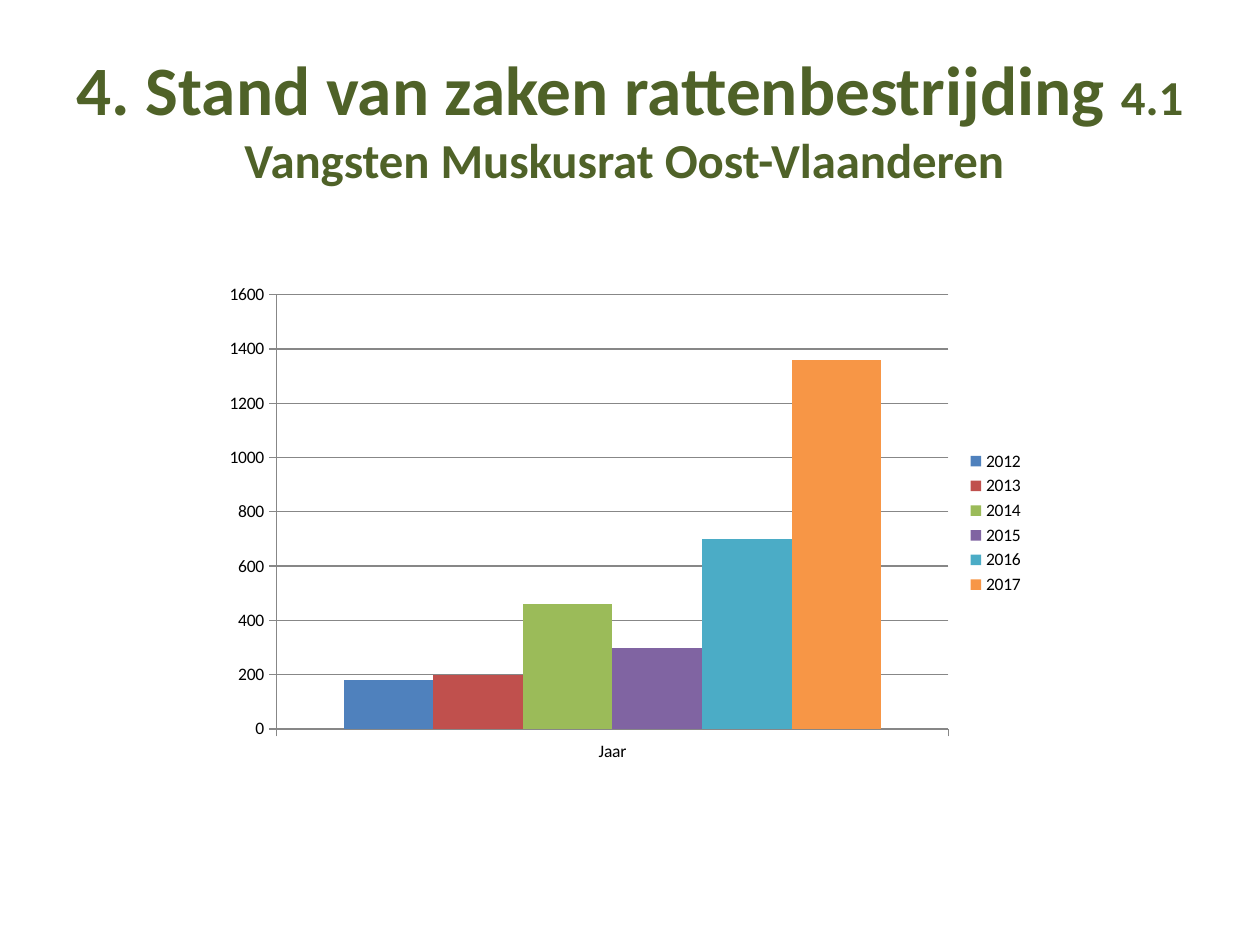
from dataclasses import dataclass

from pptx import Presentation
from pptx.chart.data import CategoryChartData
from pptx.dml.color import RGBColor
from pptx.enum.chart import XL_CHART_TYPE, XL_LEGEND_POSITION, XL_TICK_MARK
from pptx.enum.text import MSO_ANCHOR, MSO_AUTO_SIZE, PP_ALIGN
from pptx.util import Emu, Pt

PX = 914400 // 126


@dataclass(frozen=True)
class Theme:
    font: str = "Calibri"
    title: str = "4F6228"
    text: str = "000000"
    line: str = "878787"
    bars: tuple = ("4F81BD", "C0504D", "9BBB59", "8064A2", "4BACC6", "F79646")
    title_size: float = 39.6
    subtitle_size: float = 27.9
    chart_size: float = 10


THEME = Theme()
CATCHES = {"2012": 180, "2013": 200, "2014": 460,
           "2015": 300, "2016": 700, "2017": 1360}


def rgb(value):
    return RGBColor.from_string(value)


def emu(box):
    return [Emu(n * PX) for n in box]


def set_font(font, size, color, bold=False):
    font.name = THEME.font
    font.size = Pt(size)
    font.bold = bold
    font.color.rgb = rgb(color)


def add_title(slide, box, parts):
    """Fill the title placeholder with (text, size) runs."""
    sp = slide.shapes.title
    sp.left, sp.top, sp.width, sp.height = emu(box)
    tf = sp.text_frame
    tf.word_wrap = True
    tf.auto_size = MSO_AUTO_SIZE.NONE
    tf.vertical_anchor = MSO_ANCHOR.MIDDLE
    p = tf.paragraphs[0]
    p.alignment = PP_ALIGN.CENTER
    for text, size in parts:
        r = p.add_run()
        r.text = text
        set_font(r.font, size, THEME.title, bold=True)


def style_axis(axis):
    axis.major_tick_mark = XL_TICK_MARK.OUTSIDE
    axis.minor_tick_mark = XL_TICK_MARK.NONE
    axis.format.line.color.rgb = rgb(THEME.line)
    axis.format.line.width = Pt(0.75)


def add_catch_chart(slide, box):
    data = CategoryChartData()
    data.categories = ["Jaar"]
    for year, count in CATCHES.items():
        data.add_series(year, [count])
    chart = slide.shapes.add_chart(
        XL_CHART_TYPE.COLUMN_CLUSTERED, *emu(box), data).chart
    chart.has_title = False
    set_font(chart.font, THEME.chart_size, THEME.text)

    chart.has_legend = True
    chart.legend.position = XL_LEGEND_POSITION.RIGHT
    chart.legend.include_in_layout = False

    plot = chart.plots[0]
    plot.gap_width = 150
    plot.overlap = 0
    plot.vary_by_categories = False
    for series, color in zip(plot.series, THEME.bars):
        series.format.fill.solid()
        series.format.fill.fore_color.rgb = rgb(color)

    style_axis(chart.category_axis)
    axis = chart.value_axis
    style_axis(axis)
    axis.minimum_scale, axis.maximum_scale, axis.major_unit = 0, 1600, 200
    axis.has_major_gridlines = True
    grid = axis.major_gridlines.format.line
    grid.color.rgb = rgb(THEME.line)
    grid.width = Pt(0.75)


def main():
    prs = Presentation()
    prs.slide_width, prs.slide_height = emu((1260, 945))
    s = prs.slides.add_slide(prs.slide_layouts[5])
    add_title(s, (63, 38, 1134, 158), [
        ("4. Stand van zaken rattenbestrijding ", THEME.title_size),
        ("4.1 Vangsten Muskusrat Oost-Vlaanderen ", THEME.subtitle_size),
    ])
    add_catch_chart(s, (213, 275, 824, 496))
    prs.save("out.pptx")


if __name__ == "__main__":
    main()
